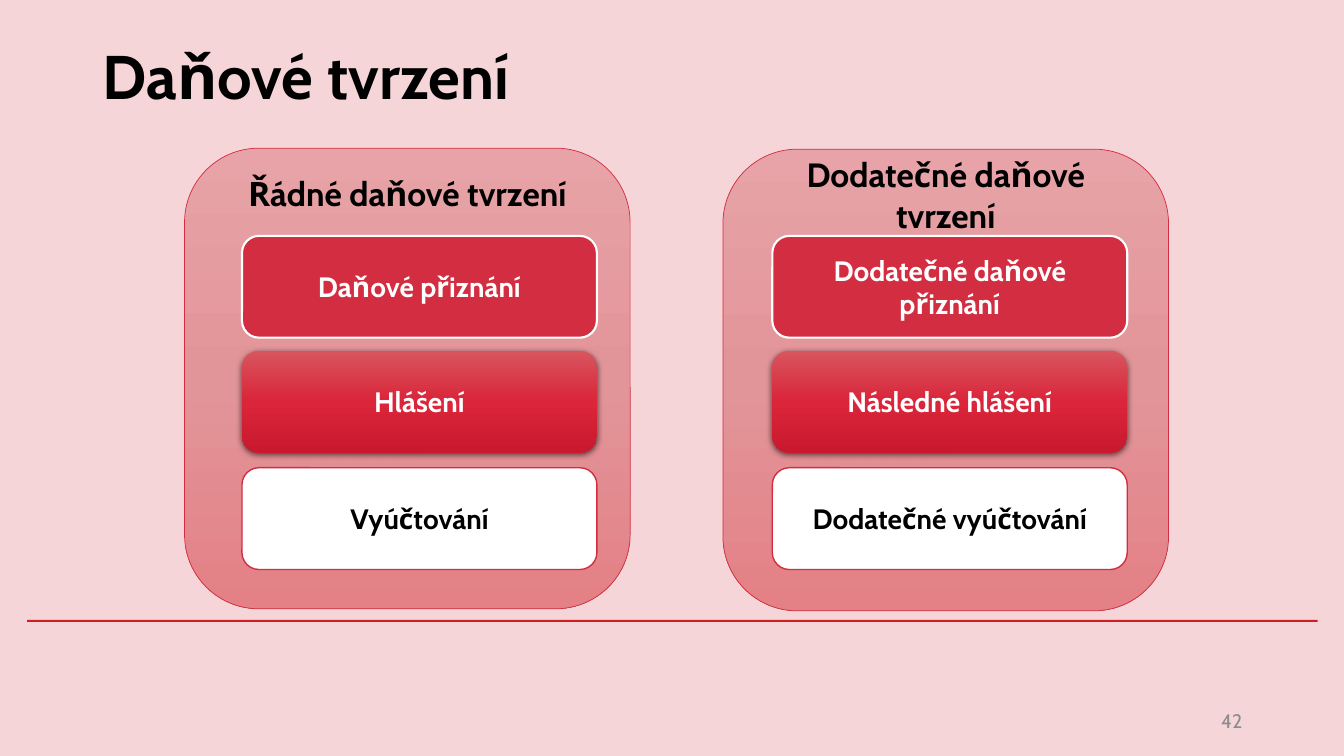
"""Build the slide comparing regular and additional tax statements."""
from copy import deepcopy
from dataclasses import dataclass

from lxml import etree
from pptx import Presentation
from pptx import util as u
from pptx.dml.color import RGBColor
from pptx.enum import shapes, text
from pptx.oxml import ns


@dataclass(frozen=True)
class Theme:
    font: str = "Cabin"
    background: str = "F6D5D9"
    rule: str = "CD1F21"
    red: str = "D22D40"
    white: str = "FFFFFF"
    black: str = "000000"
    grey: str = "8C8C8C"
    panel: tuple = ("E7A3A7", "E29599", "E38186")
    glossy: tuple = ("D8555E", "DA253A", "C9192E")
    title_size: int = 44
    heading_size: int = 24
    card_size: int = 20
    number_size: int = 14


theme = Theme()


def add_box(preset, box, fill, line=None, line_width=0):
    """Add a shape with a solid colour or a three-stop vertical gradient."""
    shape = slide.shapes.add_shape(preset, *map(u.Inches, box))
    shape.shadow.inherit = False
    if isinstance(fill, str):
        shape.fill.solid()
        shape.fill.fore_color.rgb = RGBColor.from_string(fill)
    else:
        shape.fill.gradient()
        shape.fill.gradient_angle = 270
        stop_list = shape._element.spPr.find(".//" + ns.qn("a:gsLst"))
        stop_list.insert(1, deepcopy(stop_list[0]))
        for index, (stop, color) in enumerate(zip(shape.fill.gradient_stops, fill)):
            stop.position = index / 2
            stop.color.rgb = RGBColor.from_string(color)
    if line:
        shape.line.color.rgb = RGBColor.from_string(line)
        shape.line.width = u.Pt(line_width)
    else:
        shape.line.fill.background()
    return shape


def write(shape, words, size, color, bold=True, align=text.PP_ALIGN.CENTER):
    """Write one vertically centred paragraph into a shape."""
    frame = shape.text_frame
    frame.word_wrap = True
    frame.vertical_anchor = text.MSO_ANCHOR.MIDDLE
    paragraph = frame.paragraphs[0]
    paragraph.alignment = align
    run = paragraph.add_run()
    run.text = words
    run.font.name = theme.font
    run.font.size = u.Pt(size)
    run.font.bold = bold
    run.font.color.rgb = RGBColor.from_string(color)


presentation = Presentation()
presentation.slide_width = u.Inches(13.33)
presentation.slide_height = u.Inches(7.5)
slide = presentation.slides.add_slide(presentation.slide_layouts[6])
slide.background.fill.solid()
slide.background.fill.fore_color.rgb = RGBColor.from_string(theme.background)

add_box(shapes.MSO_SHAPE.RECTANGLE, (0.27, 6.15, 12.8, 0.02), theme.rule)
title = slide.shapes.add_textbox(*map(u.Inches, (0.92, 0.02, 11.5, 1.45)))
write(title, "Daňové tvrzení", theme.title_size, theme.black, align=text.PP_ALIGN.LEFT)
number = slide.shapes.add_textbox(*map(u.Inches, (9.42, 6.95, 3, 0.4)))
write(number, "42", theme.number_size, theme.grey, bold=False, align=text.PP_ALIGN.RIGHT)

panel_width, heading_width = 4.42, 3.7
panels = [
    (1.83, 1.47, 4.57, 2.4, "Řádné daňové tvrzení",
     ("Daňové přiznání", "Hlášení", "Vyúčtování")),
    (7.17, 1.48, 4.58, 7.66, "Dodatečné daňové tvrzení",
     ("Dodatečné daňové přiznání", "Následné hlášení", "Dodatečné vyúčtování")),
]
card_styles = [
    (2.34, theme.red, theme.white, 1.5, theme.white),
    (3.48, theme.glossy, None, 0, theme.white),
    (4.64, theme.white, theme.red, 1, theme.black),
]

for left, top, height, card_left, heading_words, cards in panels:
    add_box(shapes.MSO_SHAPE.ROUNDED_RECTANGLE, (left, top, panel_width, height),
            theme.panel, theme.red, 0.5)
    heading_left = left + (panel_width - heading_width) / 2
    heading = slide.shapes.add_textbox(
        *map(u.Inches, (heading_left, top, heading_width, 0.9)))
    write(heading, heading_words, theme.heading_size, theme.black)

    for words, (card_top, fill, line, line_width, color) in zip(cards, card_styles):
        card = add_box(shapes.MSO_SHAPE.ROUNDED_RECTANGLE,
                       (card_left, card_top, 3.52, 1.01), fill, line, line_width)
        write(card, words, theme.card_size, color)
        if fill == theme.glossy:
            effects = card._element.spPr.find(ns.qn("a:effectLst"))
            shadow = etree.SubElement(
                effects, ns.qn("a:outerShdw"), blurRad=str(u.Pt(4.5)),
                dist=str(u.Pt(1.5)), dir="5400000", rotWithShape="0")
            shade = etree.SubElement(shadow, ns.qn("a:srgbClr"), val=theme.black)
            etree.SubElement(shade, ns.qn("a:alpha"), val="63000")

presentation.save("out.pptx")
